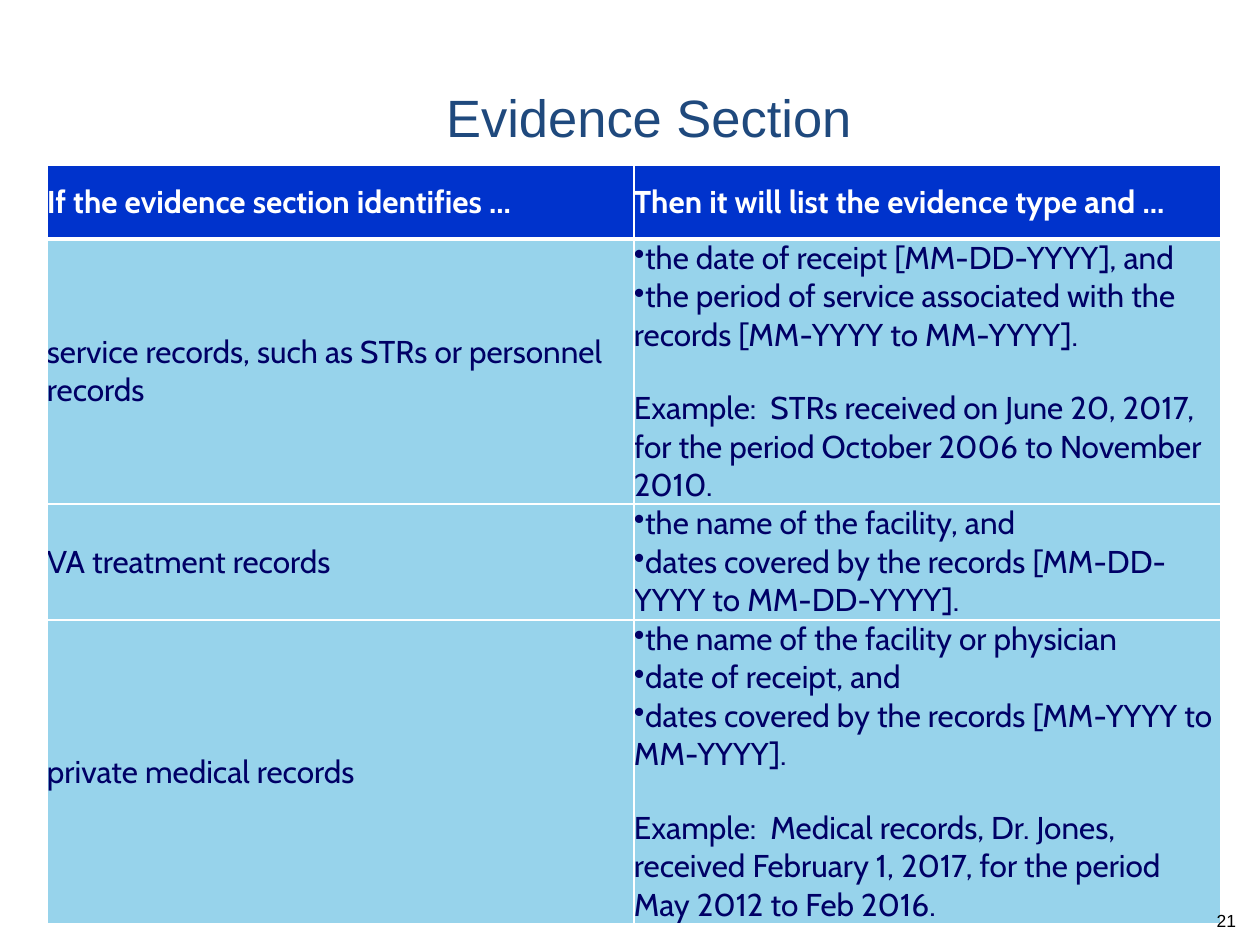
import pptx
import pptx.util
import pptx.dml.color
import pptx.enum.text
import pptx.oxml
import pptx.oxml.ns

# Content: (cause, bullets, example)
TITLE = "Evidence Section"
PAGE_NUMBER = "21"
HEADERS = ("If the evidence section identifies ...",
           "Then it will list the evidence type and ...")
ROWS = [
    ("service records, such as STRs or personnel records",
     ["the date of receipt [MM-DD-YYYY], and",
      "the period of service associated with the records [MM-YYYY to MM-YYYY]."],
     "Example:  STRs received on June 20, 2017, for the period October 2006 to November 2010."),
    ("VA treatment records",
     ["the name of the facility, and",
      "dates covered by the records [MM-DD-YYYY to MM-DD-YYYY]."],
     None),
    ("private medical records",
     ["the name of the facility or physician",
      "date of receipt, and",
      "dates covered by the records [MM-YYYY to MM-YYYY]."],
     "Example:  Medical records, Dr. Jones, received February 1, 2017, for the period May 2012 to Feb 2016."),
]

# Layout in px, colours and formats
PX = 914400 / 126
SLIDE = (1260, 945)
TITLE_BOX = (77, 73, 1144, 68)
NUMBER_BOX = (955, 910, 294, 50)
TABLE_LEFT, TABLE_TOP, COLUMN_WIDTH = 47, 165, 587
ROW_HEIGHTS = (74, 265, 116, 304)
EXAMPLE_GAP = 20
COLORS = {"title": "1F497D", "header": "0033CC", "body": "97D3EB",
          "text": "000066", "white": "FFFFFF", "black": "000000"}
FORMATS = {
    "title": {"name": "Arial", "size": 30, "color": "title"},
    "number": {"name": "Arial", "size": 10, "color": "black"},
    "header": {"name": "Cabin", "size": 18, "bold": True, "color": "white"},
    "body": {"name": "Cabin", "size": 18, "bold": False, "color": "text"},
}
ALIGN = pptx.enum.text.PP_ALIGN
ANCHOR = pptx.enum.text.MSO_ANCHOR


def px(value):
    return pptx.util.Emu(round(value * PX))


def rgb(name):
    return pptx.dml.color.RGBColor.from_string(COLORS[name])


def set_font(font, format_name):
    for key, value in FORMATS[format_name].items():
        if key == "color":
            font.color.rgb = rgb(value)
        else:
            setattr(font, key, pptx.util.Pt(value) if key == "size" else value)


def set_margins(target, left=0, top=0, right=0, bottom=0):
    sides = {"left": left, "top": top, "right": right, "bottom": bottom}
    for side, value in sides.items():
        setattr(target, "margin_" + side, px(value))


def add_text(slide, box, text, format_name, alignment, **margins):
    frame = slide.shapes.add_textbox(*map(px, box)).text_frame
    frame.word_wrap = True
    frame.vertical_anchor = ANCHOR.TOP
    set_margins(frame, **margins)
    paragraph = frame.paragraphs[0]
    paragraph.alignment = alignment
    run = paragraph.add_run()
    run.text = text
    set_font(run.font, format_name)


def add_bullet(paragraph):
    properties = paragraph._p.get_or_add_pPr()
    properties.set("marL", "0")
    properties.set("indent", "0")
    properties.append(pptx.oxml.parse_xml(
        f'<a:buChar {pptx.oxml.ns.nsdecls("a")} char="•"/>'))


def style_cell(cell, fill_name, widths):
    set_margins(cell)
    cell.vertical_anchor = ANCHOR.MIDDLE
    properties = cell._tc.get_or_add_tcPr()
    for side, points in widths.items():
        properties.append(pptx.oxml.parse_xml(
            f'<a:ln{side} {pptx.oxml.ns.nsdecls("a")} w="{points * 12700}"><a:solidFill>'
            f'<a:srgbClr val="{COLORS["white"]}"/></a:solidFill></a:ln{side}>'))
    cell.fill.solid()
    cell.fill.fore_color.rgb = rgb(fill_name)


def fill_cell(cell, lines, format_name):
    """Write (kind, text) lines, one paragraph each."""
    frame = cell.text_frame
    for index, (kind, text) in enumerate(lines):
        paragraph = frame.add_paragraph() if index else frame.paragraphs[0]
        if kind == "example":
            paragraph.space_before = pptx.util.Pt(EXAMPLE_GAP)
        if kind == "bullet":
            add_bullet(paragraph)
        run = paragraph.add_run()
        run.text = text
        set_font(run.font, format_name)


def add_evidence_table(slide):
    table = slide.shapes.add_table(
        len(ROW_HEIGHTS), 2, px(TABLE_LEFT), px(TABLE_TOP),
        px(2 * COLUMN_WIDTH), px(sum(ROW_HEIGHTS))).table
    for column in table.columns:
        column.width = px(COLUMN_WIDTH)
    for row, height in zip(table.rows, ROW_HEIGHTS):
        row.height = px(height)

    grid = [[[("plain", header)] for header in HEADERS]]
    for cause, bullets, example in ROWS:
        details = [("bullet", bullet) for bullet in bullets]
        if example:
            details.append(("example", example))
        grid.append([[("plain", cause)], details])

    for row_index, row_lines in enumerate(grid):
        kind = "body" if row_index else "header"
        widths = {"L": 1, "R": 1, "T": 3 if row_index == 1 else 1,
                  "B": 1 if row_index else 3}
        for column_index, lines in enumerate(row_lines):
            cell = table.cell(row_index, column_index)
            style_cell(cell, kind, widths)
            fill_cell(cell, lines, kind)


def main():
    presentation = pptx.Presentation()
    presentation.slide_width, presentation.slide_height = map(px, SLIDE)
    slide = presentation.slides.add_slide(presentation.slide_layouts[6])
    add_text(slide, TITLE_BOX, TITLE, "title", ALIGN.CENTER, top=12)
    add_evidence_table(slide)
    add_text(slide, NUMBER_BOX, PAGE_NUMBER, "number", ALIGN.RIGHT,
             left=13, right=13, bottom=6)
    presentation.save("out.pptx")


if __name__ == "__main__":
    main()
